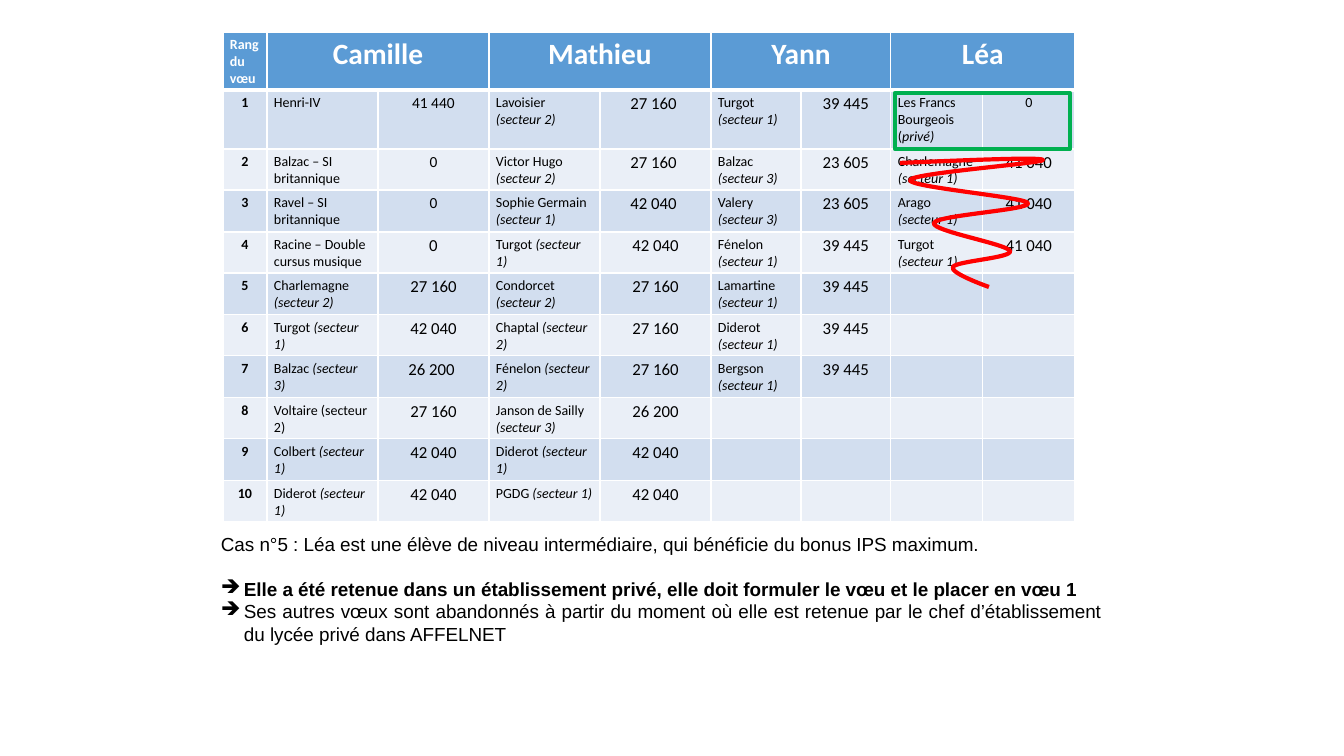
import pptx
import pptx.dml.color
import pptx.enum.shapes
import pptx.enum.text
import pptx.oxml
import pptx.oxml.ns
import pptx.util

PX = 914400 / 100.8  # EMU in one px
COLORS = {"header": "5B9BD5", "odd": "D2DEEF", "even": "EAEFF7", "white": "FFFFFF",
          "black": "000000", "green": "00B050", "red": "FF0000"}
ALIGN = pptx.enum.text.PP_ALIGN
COLUMNS = [44, 111, 111, 111, 111, 90, 90, 92, 92]
ROWS = [58, 59] + [41 + i % 2 for i in range(9)]
PUPILS = ["Camille", "Mathieu", "Yann", "Léa"]

# One row per wish: school and points for each pupil; text after | is italic
WISHES = [
    ["Henri-IV", "41 440", "Lavoisier |(secteur 2)", "27 160 ",
     "Turgot |(secteur 1)", "39 445", "Les Francs Bourgeois (|privé)", "0"],
    ["Balzac – SI britannique", "0", "Victor Hugo| (secteur 2)", "27 160 ",
     "Balzac |(secteur 3)", "23 605", "Charlemagne |(secteur 1)", "41 040"],
    ["Ravel – SI britannique", "0", "Sophie Germain |(secteur 1)", "42 040 ",
     "Valery |(secteur 3)", "23 605", "Arago |(secteur 1)", "41 040"],
    ["Racine – Double cursus musique", "0", "Turgot |(secteur 1)", "42 040",
     "Fénelon |(secteur 1)", "39 445", "Turgot |(secteur 1)", "41 040"],
    ["Charlemagne |(secteur 2)", "27 160", "Condorcet |(secteur 2)", "27 160",
     "Lamartine |(secteur 1)", "39 445"],
    ["Turgot |(secteur 1)", "42 040", "Chaptal |(secteur 2)", "27 160",
     "Diderot |(secteur 1)", "39 445"],
    ["Balzac| (secteur 3)", "26 200 ", "Fénelon |(secteur 2)", "27 160",
     "Bergson |(secteur 1)", "39 445"],
    ["Voltaire (secteur 2)", "27 160", "Janson de Sailly |(secteur 3)", "26 200"],
    ["Colbert |(secteur 1)", "42 040", "Diderot |(secteur 1)", "42 040"],
    ["Diderot |(secteur 1)", "42 040", "PGDG |(secteur 1)", "42 040"],
]
SMALL_POINTS = {(1, 2): 11, (2, 2): 11, (3, 2): 11, (1, 8): 10}

# Path of the crossing-out: a start, then three points per curve
SCRIBBLE = [(900, 163),
            (971, 160), (1041, 157), (1043, 160), (1045, 163), (913, 173), (910, 180),
            (907, 187), (1024, 197), (1028, 203), (1032, 210), (937, 215), (934, 223),
            (931, 231), (1007, 244), (1010, 251), (1013, 258), (956, 261), (953, 267),
            (949, 273), (989, 287), (989, 287)]

CASE = ("Cas n°5 : Léa est une élève de niveau intermédiaire, "
        "qui bénéficie du bonus IPS maximum.")
ADVICE = [
    ("Elle a été retenue dans un établissement privé, elle doit formuler le vœu "
     "et le placer en vœu 1", True),
    ("Ses autres vœux sont abandonnés à partir du moment où elle est retenue par le chef "
     "d’établissement du lycée privé dans AFFELNET", False),
]


def px(*lengths):
    return [pptx.util.Emu(round(length * PX)) for length in lengths]


def rgb(name):
    return pptx.dml.color.RGBColor.from_string(COLORS[name])


def add_span(para, text, color="black", **formats):
    span = para.add_run()
    span.text = text
    for key, value in {"name": "Calibri", "bold": False, "italic": False, **formats}.items():
        setattr(span.font, key, value)
    span.font.color.rgb = rgb(color)


def style_cell(cell, row):
    for side, length in zip(("left", "top", "right", "bottom"), px(7, 4, 7, 3)):
        setattr(cell, "margin_" + side, length)
    properties = cell._tc.get_or_add_tcPr()
    for side in "LRTB":
        thick = (row, side) in ((0, "B"), (1, "T"))
        properties.append(pptx.oxml.parse_xml(
            f'<a:ln{side} {pptx.oxml.ns.nsdecls("a")} w="{38100 if thick else 12700}">'
            f'<a:solidFill><a:srgbClr val="{COLORS["white"]}"/></a:solidFill></a:ln{side}>'))
    cell.fill.solid()
    cell.fill.fore_color.rgb = rgb("header" if row == 0 else "odd" if row % 2 else "even")


def add_wish_table(page, left, top):
    frame = page.shapes.add_table(len(ROWS), len(COLUMNS),
                                  *px(left, top, sum(COLUMNS), sum(ROWS)))
    table = frame.table
    for column, width in zip(table.columns, px(*COLUMNS)):
        column.width = width
    for line, height in zip(table.rows, px(*ROWS)):
        line.height = height
    for row in range(len(ROWS)):
        for column in range(len(COLUMNS)):
            style_cell(table.cell(row, column), row)

    # Header: rank, then one merged cell per pupil
    heading = {"color": "white", "bold": True}
    para = table.cell(0, 0).text_frame.paragraphs[0]
    add_span(para, "Rang", size=pptx.util.Pt(10), **heading)
    para.add_line_break()
    add_span(para, "du vœu", size=pptx.util.Pt(10), **heading)
    for index, pupil in enumerate(PUPILS):
        cell = table.cell(0, 1 + 2 * index)
        cell.merge(table.cell(0, 2 + 2 * index))
        para = cell.text_frame.paragraphs[0]
        para.alignment = ALIGN.CENTER
        add_span(para, pupil, size=pptx.util.Pt(21), **heading)

    # Body: even columns are centred numbers, odd ones are schools
    for row, wishes in enumerate(WISHES, 1):
        for column, text in enumerate([str(row)] + wishes):
            para = table.cell(row, column).text_frame.paragraphs[0]
            size = 10
            if column % 2 == 0:
                para.alignment = ALIGN.CENTER
                size = SMALL_POINTS.get((row, column), 12) if column else 10
            for part, words in enumerate(text.split("|")):
                add_span(para, words, size=pptx.util.Pt(size),
                         bold=column == 0, italic=part == 1)


def add_comment(page, left, top, width, height):
    box = page.shapes.add_textbox(*px(left, top, width, height))
    box.text_frame.word_wrap = True
    for index, (text, bold) in enumerate([(CASE, False)] + ADVICE):
        para = box.text_frame.paragraphs[0] if index == 0 else box.text_frame.add_paragraph()
        para.alignment = ALIGN.LEFT if bold else ALIGN.JUSTIFY
        para.line_spacing = pptx.util.Pt(16)
        if index == 1:
            para.space_before = pptx.util.Pt(16)
        if index:
            properties = para._p.get_or_add_pPr()
            indent = px(23)[0]
            properties.set("marL", str(indent))
            properties.set("indent", str(-indent))
            properties.append(pptx.oxml.parse_xml(
                f'<a:buChar {pptx.oxml.ns.nsdecls("a")} char="➔"/>'))
        add_span(para, text, name="Arial", size=pptx.util.Pt(13.5), bold=bold)


def outline(shape, color):
    shape.shadow.inherit = False
    shape.fill.background()
    shape.line.color.rgb = rgb(color)
    shape.line.width = pptx.util.Pt(3)


def add_kept_wish(page, left, top, width, height):
    frame = page.shapes.add_shape(pptx.enum.shapes.MSO_SHAPE.RECTANGLE,
                                  *px(left, top, width, height))
    outline(frame, "green")


def add_scribble(page, points):
    builder = page.shapes.build_freeform(*points[0], scale=PX)
    builder.add_line_segments(points[1:], close=False)
    scribble = builder.convert_to_shape()
    outline(scribble, "red")
    # Turn each group of three line segments into one Bezier curve
    segments = list(scribble._element.iter(pptx.oxml.ns.qn("a:lnTo")))
    for start in range(0, len(segments), 3):
        curve = pptx.oxml.parse_xml(f'<a:cubicBezTo {pptx.oxml.ns.nsdecls("a")}/>')
        segments[start].addprevious(curve)
        for segment in segments[start:start + 3]:
            curve.append(segment[0])
            segment.getparent().remove(segment)


def main():
    deck = pptx.Presentation()
    deck.slide_width, deck.slide_height = px(1344, 756)
    page = deck.slides.add_slide(deck.slide_layouts[6])
    add_wish_table(page, 223, 32)
    add_comment(page, 211, 528, 901, 125)
    add_kept_wish(page, 895, 93, 175, 56)
    add_scribble(page, SCRIBBLE)
    deck.save("out.pptx")


if __name__ == "__main__":
    main()
